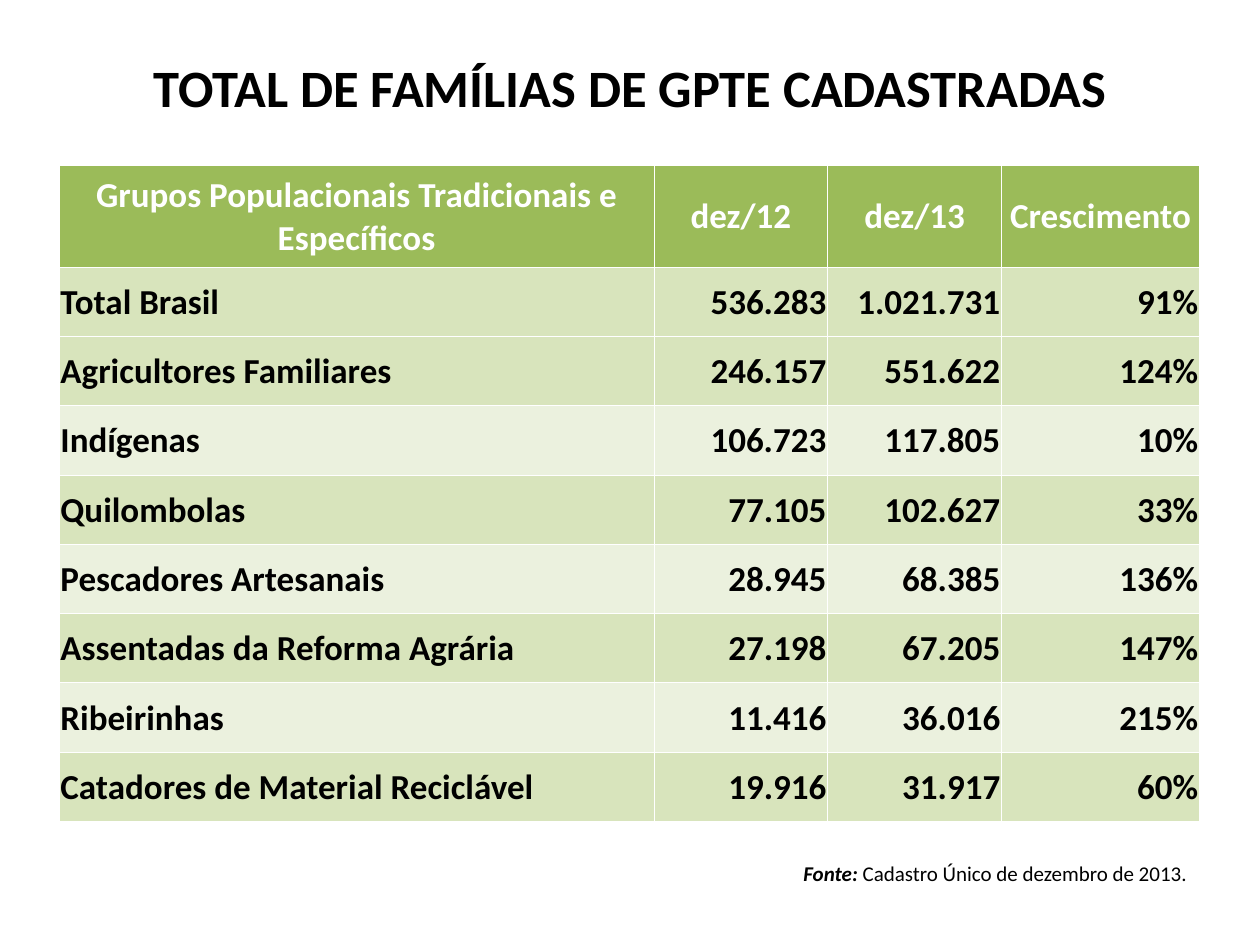
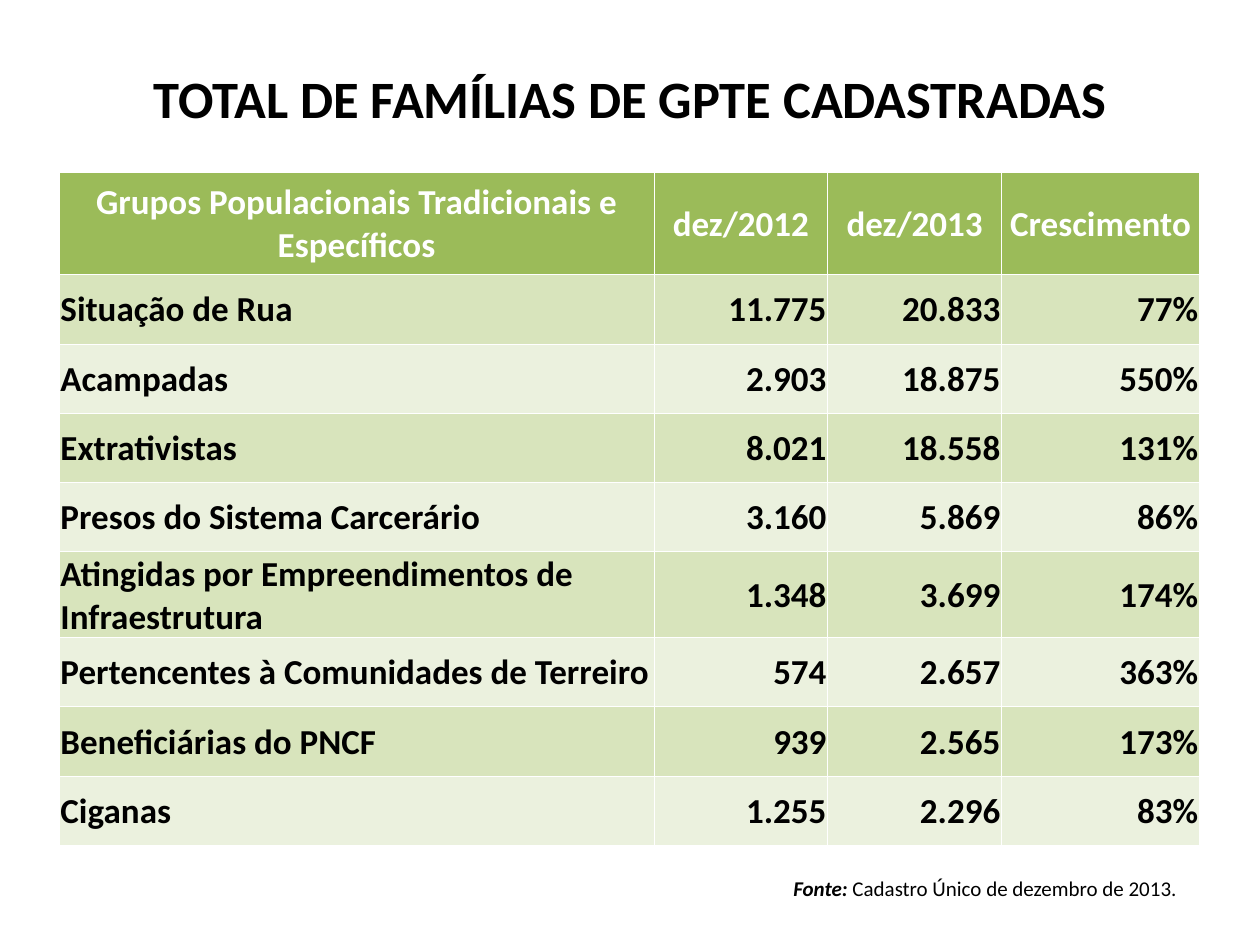
from lxml.etree import SubElement
from pptx import Presentation
from pptx.dml.color import RGBColor
from pptx.enum.text import MSO_ANCHOR, PP_ALIGN
from pptx.oxml.ns import qn
from pptx.util import Inches, Pt

UNIT = 0.1
FONT = "Calibri"
BLACK, WHITE = "000000", "FFFFFF"
HEADER, DARK, LIGHT = "9BBB59", "D8E4BC", "EBF1DE"
TITLE = "TOTAL DE FAMÍLIAS DE GPTE CADASTRADAS"
SOURCE = ("Fonte:", " Cadastro Único de dezembro de 2013.")
COLUMNS = (47.2, 13.8, 13.8, 15.7)
HEADER_ROW, BODY_ROW, TALL_ROW = 8.1, 5.5, 6.8
CELL_FORMAT = {
    "vertical_anchor": MSO_ANCHOR.MIDDLE,
    "margin_left": Inches(0.01),
    "margin_right": Inches(0.01),
    "margin_top": Inches(0.01),
    "margin_bottom": 0,
}

TABLES = [
    {
        "title": (10.2, 3.6, 79.7, 7.1),
        "table": (4.7, 13.1),
        "source": (26.4, 67.8, 68.8, 3.9),
        "years": ("dez/12", "dez/13"),
        "has_total": True,
        "tall_rows": (),
        "groups": [
            ("Total Brasil", "536.283", "1.021.731", "91%"),
            ("Agricultores Familiares", "246.157", "551.622", "124%"),
            ("Indígenas", "106.723", "117.805", "10%"),
            ("Quilombolas", "77.105", "102.627", "33%"),
            ("Pescadores Artesanais", "28.945", "68.385", "136%"),
            ("Assentadas da Reforma Agrária", "27.198", "67.205", "147%"),
            ("Ribeirinhas", "11.416", "36.016", "215%"),
            ("Catadores de Material Reciclável", "19.916", "31.917", "60%"),
        ],
    },
    {
        "title": (10.2, 4.4, 79.7, 7.1),
        "table": (4.7, 13.7),
        "source": (61, 69, 33.4, 3.9),
        "years": ("dez/2012", "dez/2013"),
        "has_total": False,
        "tall_rows": (5,),
        "groups": [
            ("Situação de Rua", "11.775", "20.833", "77%"),
            ("Acampadas", "2.903", "18.875", "550%"),
            ("Extrativistas", "8.021", "18.558", "131%"),
            ("Presos do Sistema Carcerário", "3.160", "5.869", "86%"),
            ("Atingidas por Empreendimentos de Infraestrutura", "1.348", "3.699", "174%"),
            ("Pertencentes à Comunidades de Terreiro", "574", "2.657", "363%"),
            ("Beneficiárias do PNCF", "939", "2.565", "173%"),
            ("Ciganas", "1.255", "2.296", "83%"),
        ],
    },
]


def grid(n):
    """Turn grid units into a slide length."""
    return Inches(n * UNIT)


def rgb(value):
    """Turn a hex string into a colour."""
    return RGBColor.from_string(value)


def set_all(obj, values):
    """Set every attribute in a dict on an object."""
    for name, value in values.items():
        setattr(obj, name, value)


def add_run(p, text, size, color=BLACK, **style):
    """Add a formatted run to a paragraph."""
    r = p.add_run()
    r.text = text
    set_all(r.font, {"name": FONT, "size": Pt(size), **style})
    r.font.color.rgb = rgb(color)


def add_text(s, box, align, **frame):
    """Add a wrapping text box and return its paragraph."""
    tf = s.shapes.add_textbox(*map(grid, box)).text_frame
    set_all(tf, {"word_wrap": True, **frame})
    p = tf.paragraphs[0]
    p.alignment = align
    return p


def add_title(s, box):
    """Place the slide title in its box."""
    p = add_text(s, box, PP_ALIGN.CENTER, margin_top=Inches(0.08))
    add_run(p, TITLE, 30, bold=True)


def add_source(s, box):
    """Place the source line in its box."""
    p = add_text(s, box, PP_ALIGN.RIGHT)
    label, detail = SOURCE
    add_run(p, label, 12, bold=True, italic=True)
    add_run(p, detail, 12, bold=False, italic=False)


def fill_cell(cell, text, align, color, fill):
    """Write and format one table cell with thin white borders."""
    set_all(cell, CELL_FORMAT)
    tcPr = cell._tc.get_or_add_tcPr()
    for side in ("lnL", "lnR", "lnT", "lnB"):
        ln = SubElement(tcPr, qn(f"a:{side}"), w=str(Pt(0.5)))
        SubElement(SubElement(ln, qn("a:solidFill")), qn("a:srgbClr"), val=WHITE)
    cell.fill.solid()
    cell.fill.fore_color.rgb = rgb(fill)
    p = cell.text_frame.paragraphs[0]
    p.alignment = align
    add_run(p, text, 20, color, bold=True)


def add_groups_table(s, origin, years, groups, has_total, tall_rows):
    """Place the table of population groups from its top left corner."""
    header = ("Grupos Populacionais Tradicionais e Específicos", *years, "Crescimento")
    rows = [header, *groups]
    heights = [HEADER_ROW] + [
        TALL_ROW if i in tall_rows else BODY_ROW for i in range(1, len(rows))
    ]
    box = (*origin, sum(COLUMNS), sum(heights))
    table = s.shapes.add_table(len(rows), len(COLUMNS), *map(grid, box)).table
    set_all(table, {"first_row": False, "horz_banding": False})
    for column, width in zip(table.columns, COLUMNS):
        column.width = grid(width)
    for i, (row, height, values) in enumerate(zip(table.rows, heights, rows)):
        row.height = grid(height)
        band = max(1, i - has_total)
        fill = HEADER if i == 0 else DARK if band % 2 else LIGHT
        color = BLACK if i else WHITE
        for j, (cell, value) in enumerate(zip(row.cells, values)):
            body_align = PP_ALIGN.RIGHT if j else PP_ALIGN.LEFT
            fill_cell(cell, value, body_align if i else PP_ALIGN.CENTER, color, fill)


def add_table_slide(prs, data):
    """Add one slide with title, table and source line."""
    s = prs.slides.add_slide(prs.slide_layouts[6])
    add_title(s, data["title"])
    add_groups_table(s, data["table"], data["years"], data["groups"],
                     data["has_total"], data["tall_rows"])
    add_source(s, data["source"])


def main():
    """Build and save the presentation."""
    prs = Presentation()
    set_all(prs, {"slide_width": grid(100), "slide_height": grid(75)})
    for data in TABLES:
        add_table_slide(prs, data)
    prs.save("out.pptx")


if __name__ == "__main__":
    main()
